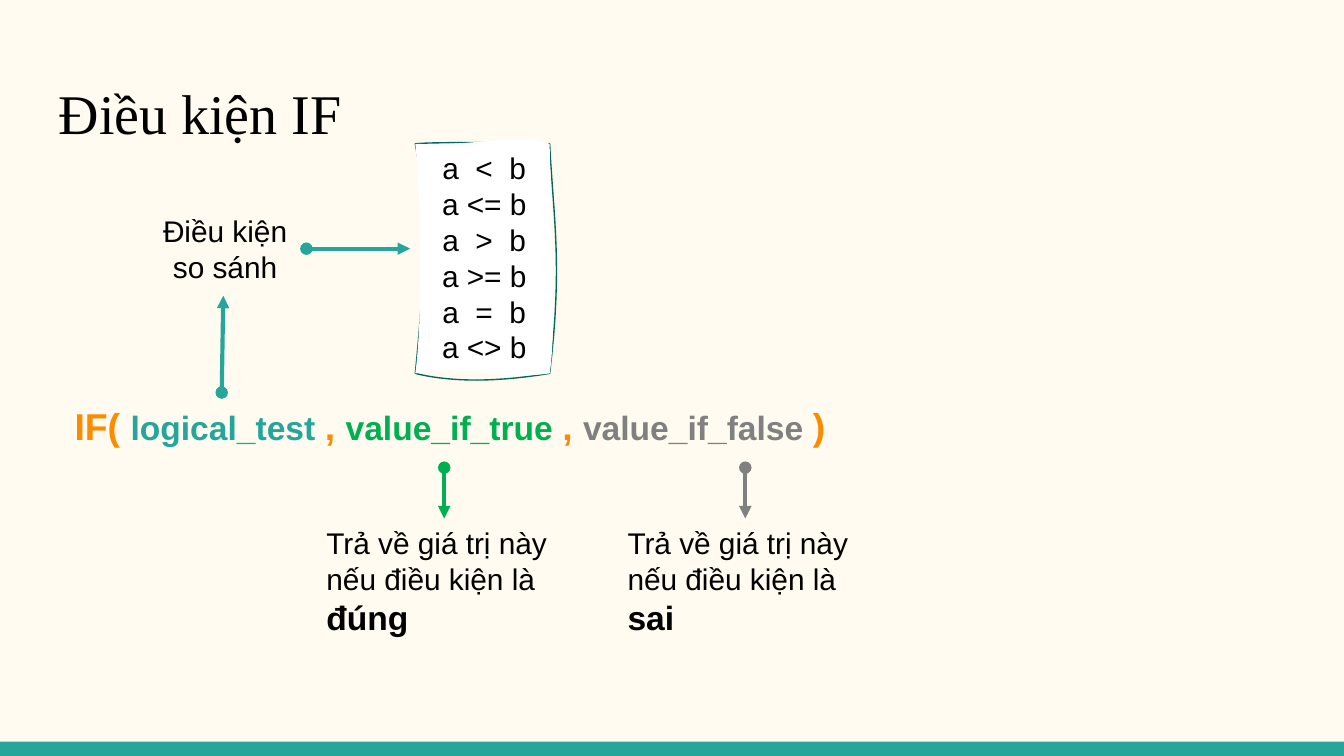
import pptx
import pptx.dml.color
import pptx.enum.shapes
import pptx.enum.text
import pptx.oxml
import pptx.oxml.ns
import pptx.util
from lxml import etree

Cm, Pt = pptx.util.Cm, pptx.util.Pt
RGBColor = pptx.dml.color.RGBColor
PP_ALIGN = pptx.enum.text.PP_ALIGN
MSO_ANCHOR = pptx.enum.text.MSO_ANCHOR

CREAM = RGBColor(0xFF, 0xFB, 0xF0)
TEAL = RGBColor(0x26, 0xA6, 0x9A)
DARK_TEAL = RGBColor(0x00, 0x69, 0x5C)
ORANGE = RGBColor(0xFB, 0x8C, 0x00)
GREEN = RGBColor(0x00, 0xB0, 0x50)
GRAY = RGBColor(0x80, 0x80, 0x80)
BLACK = RGBColor(0, 0, 0)
WHITE = RGBColor(0xFF, 0xFF, 0xFF)

# Content: a run is (text, size, bold, colour)
TITLE = "Điều kiện IF"
FORMULA = [
    ("IF( ", 20, True, ORANGE),
    ("logical_test ", 18, True, TEAL),
    (", ", 20, True, ORANGE),
    ("value_if_true ", 18, True, GREEN),
    (", ", 20, True, ORANGE),
    ("value_if_false ", 18, True, GRAY),
    (")", 20, True, ORANGE),
]
CONDITION = "Điều kiện so sánh"
COMPARISONS = ["a  <  b", "a <= b", "a  >  b", "a >= b", "a  =  b", "a <> b"]
RETURN_TEXT = "Trả về giá trị này nếu điều kiện là "
RESULTS = [("đúng", 5.92, GREEN), ("sai", 11.61, GRAY)]  # word, left, arrow colour

# Layout, in centimetres
PAGE_W, PAGE_H, BAND_H = 25.4, 14.29, 0.27
MARGIN, CONTENT_W = 0.86, 23.67
RESULT_TOP, RESULT_W, RESULT_H = 9.8, 4.95, 2.39
ARROW_TOP = 8.84
CONDITION_ARROWS = [((4.19, 7.42), (4.22, 5.59)), ((5.79, 4.7), (7.75, 4.7))]

# Scroll sides: two control points and an end point for each curve
SCROLL_START = (7.85, 2.72)
SCROLL_EDGE = [
    ((8.13, 2.69), (9.22, 2.69), (10.39, 2.72)),
    ((10.46, 4.17), (10.64, 4.98), (10.39, 7.06)),
    ((9.17, 7.26), (8.38, 7.19), (7.85, 7.06)),
    ((8.03, 5.28), (8.08, 3.89), SCROLL_START),
]
SCROLL_PAPER = [
    ((8.99, 2.77), (9.8, 2.51), (10.39, 2.72)),
    ((10.39, 3.3), (10.54, 6.2), (10.39, 7.06)),
    ((9.3, 7.21), (8.84, 6.86), (7.85, 7.06)),
    ((7.98, 6.15), (7.98, 3.91), SCROLL_START),
]
CURVE_STEPS = 16

deck = pptx.Presentation()
deck.slide_width, deck.slide_height = Cm(PAGE_W), Cm(PAGE_H)
slide = deck.slides.add_slide(deck.slide_layouts[6])
slide.background.fill.solid()
slide.background.fill.fore_color.rgb = CREAM


def write(shape, paragraphs, font="Arial", align=PP_ALIGN.LEFT, spacing=1.0, **frame_format):
    """Fill a shape with paragraphs, each a list of runs."""
    frame = shape.text_frame
    for name, value in {"word_wrap": True, **frame_format}.items():
        setattr(frame, name, value)
    for index, runs in enumerate(paragraphs):
        paragraph = frame.add_paragraph() if index else frame.paragraphs[0]
        paragraph.alignment, paragraph.line_spacing = align, spacing
        for text, size, bold, colour in runs:
            run = paragraph.add_run()
            run.text = text
            for name, value in {"name": font, "size": Pt(size), "bold": bold}.items():
                setattr(run.font, name, value)
            run.font.color.rgb = colour


def add_text(left, top, width, height, paragraphs, **text_format):
    box = slide.shapes.add_textbox(Cm(left), Cm(top), Cm(width), Cm(height))
    write(box, paragraphs, **text_format)


def add_arrow(start, end, colour):
    """Draw a line with a dot at its start and an arrowhead at its end."""
    arrow = slide.shapes.add_connector(
        pptx.enum.shapes.MSO_CONNECTOR.STRAIGHT, *(Cm(v) for v in start + end))
    arrow.line.width = Pt(2.25)
    arrow.line.color.rgb = colour
    line = arrow.line._get_or_add_ln()
    for tag, kind in (("a:headEnd", "oval"), ("a:tailEnd", "triangle")):
        etree.SubElement(line, pptx.oxml.ns.qn(tag), type=kind)
    etree.SubElement(arrow._element.spPr, pptx.oxml.ns.qn("a:effectLst"))


def curve_points(start, curves):
    """Sample a chain of cubic curves as points in EMU."""
    points = []
    for control_1, control_2, end in curves:
        for step in range(1, CURVE_STEPS + 1):
            t = step / CURVE_STEPS
            weights = ((1 - t) ** 3, 3 * t * (1 - t) ** 2, 3 * t * t * (1 - t), t ** 3)
            corners = (start, control_1, control_2, end)
            points.append(tuple(
                Cm(sum(w * corner[axis] for w, corner in zip(weights, corners)))
                for axis in (0, 1)))
        start = end
    return points


def add_scroll(curves):
    builder = slide.shapes.build_freeform(*(Cm(v) for v in SCROLL_START))
    builder.add_line_segments(curve_points(SCROLL_START, curves), close=True)
    scroll = builder.convert_to_shape()
    scroll.shadow.inherit = False
    return scroll


band = slide.shapes.add_shape(
    pptx.enum.shapes.MSO_SHAPE.RECTANGLE,
    0, Cm(PAGE_H - BAND_H), Cm(PAGE_W), Cm(BAND_H))
band.shadow.inherit = False
band.fill.solid()
band.fill.fore_color.rgb = TEAL
band.line.fill.background()

even_insets = {"margin_" + side: Cm(0.25) for side in ("left", "top", "right", "bottom")}
add_text(MARGIN, 1.24, CONTENT_W, 1.7, [[(TITLE, 30, False, BLACK)]],
         font="Times New Roman", **even_insets)
add_text(MARGIN, 3.25, CONTENT_W, 9.45, [FORMULA], spacing=1.15,
         vertical_anchor=MSO_ANCHOR.MIDDLE, **{**even_insets, "margin_left": Cm(0.55)})

add_text(2.72, 3.89, 3.07, 1.63, [[(CONDITION, 16, False, BLACK)]], align=PP_ALIGN.CENTER)
for dot, tip in CONDITION_ARROWS:
    add_arrow(dot, tip, TEAL)

edge = add_scroll(SCROLL_EDGE)
edge.fill.background()
edge.line.color.rgb = DARK_TEAL
edge.line.width = Pt(0.75)
paper = add_scroll(SCROLL_PAPER)
paper.fill.solid()
paper.fill.fore_color.rgb = WHITE
paper.line.fill.background()
write(paper, [[(text, 16, False, BLACK)] for text in COMPARISONS],
      align=PP_ALIGN.CENTER, vertical_anchor=MSO_ANCHOR.MIDDLE)

for word, left, colour in RESULTS:
    add_text(left, RESULT_TOP, RESULT_W, RESULT_H,
             [[(RETURN_TEXT, 16, False, BLACK), (word, 18, True, BLACK)]])
    center = left + RESULT_W / 2
    add_arrow((center, ARROW_TOP), (center, RESULT_TOP), colour)

deck.save("out.pptx")
